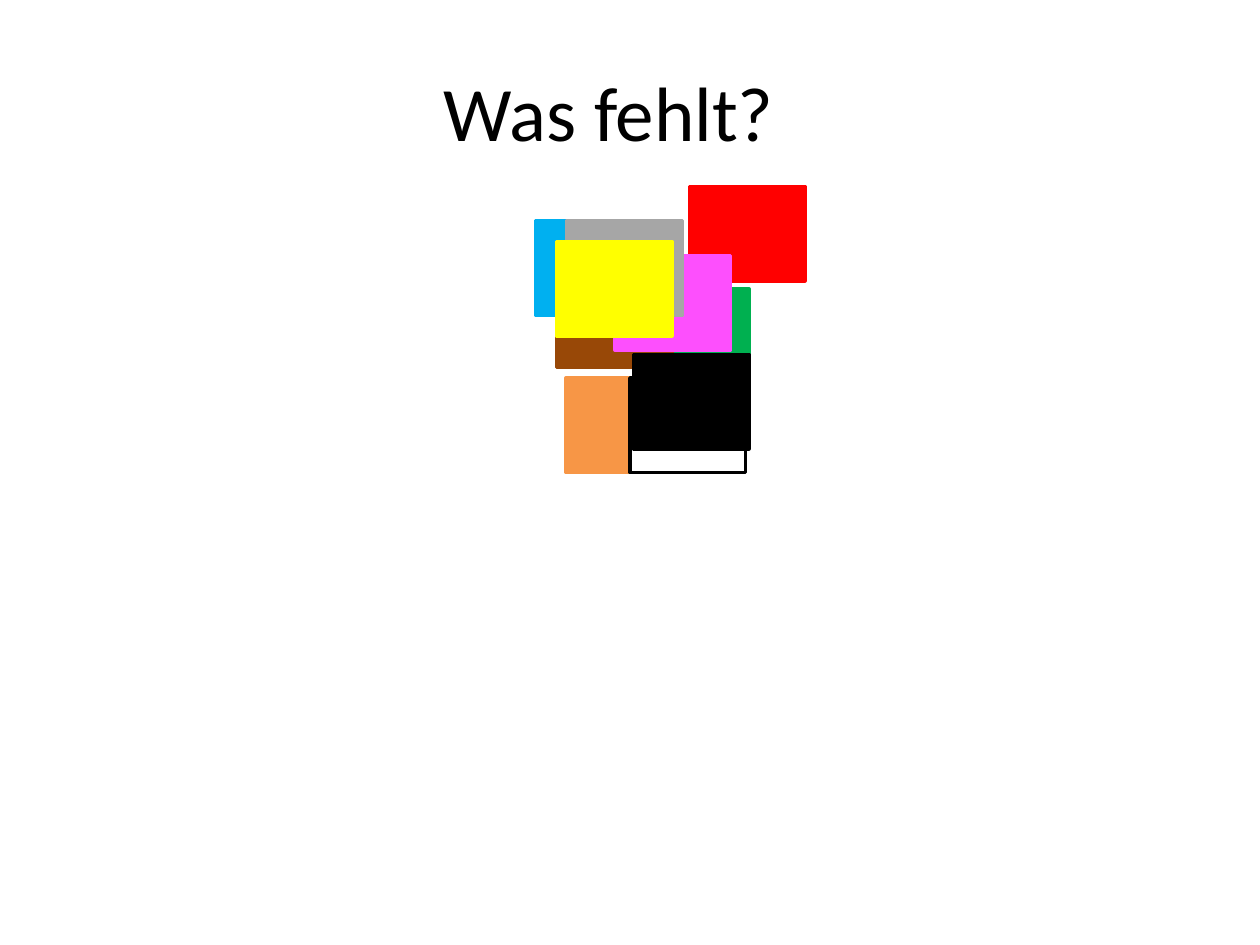
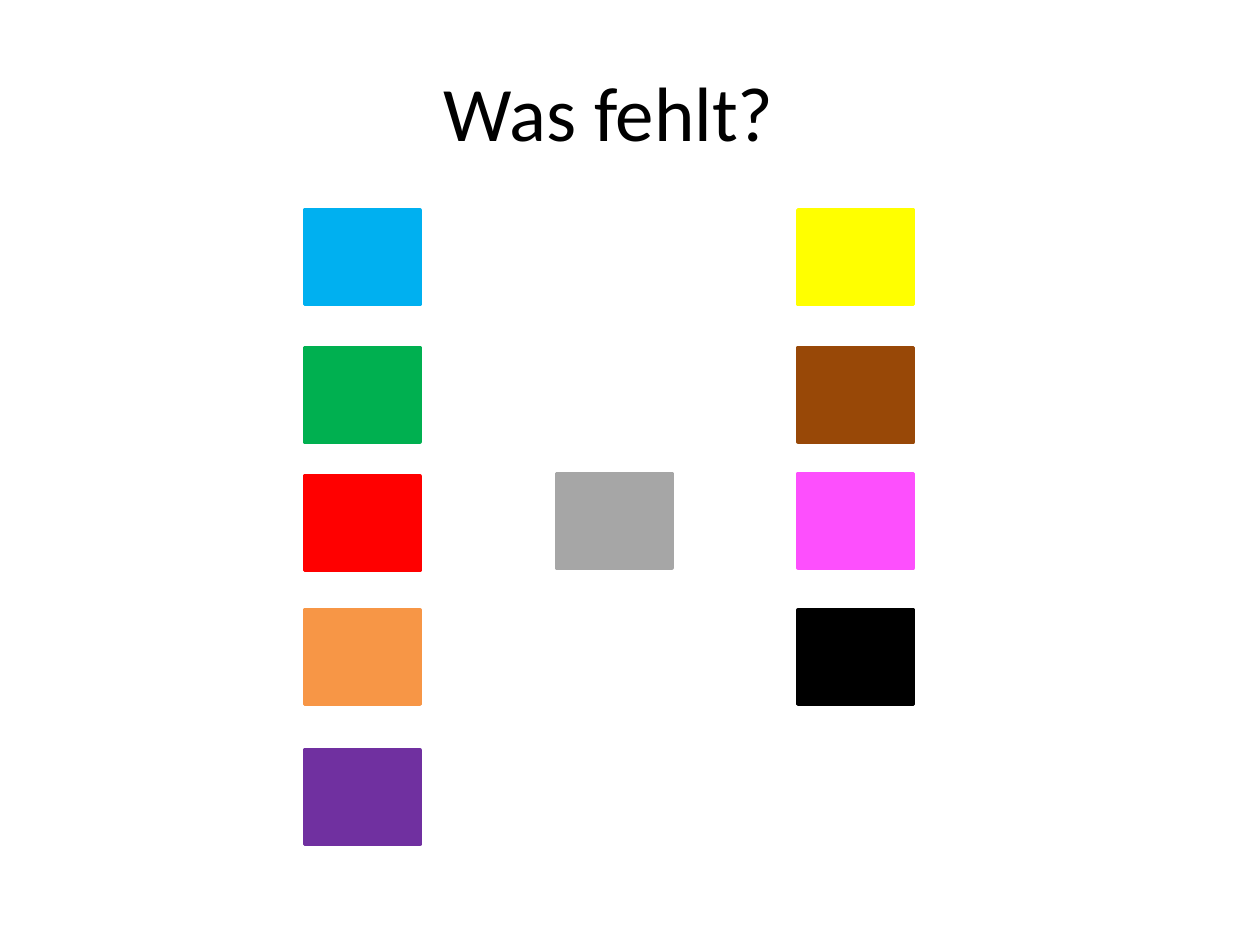
import pptx
import pptx.util
import pptx.dml.color
import pptx.enum.shapes
import pptx.enum.text

Pt = pptx.util.Pt
RGBColor = pptx.dml.color.RGBColor

theme = {
    "font": "Calibri",
    "title_size": 44,
    "line_width": 2,
    "text": "000000",
    "blue": "00B0F0",
    "green": "00B050",
    "red": "FF0000",
    "orange": "F79646",
    "purple": "7030A0",
    "brown": "984807",
    "white": "FFFFFF",
    "pink": "FD4FFD",
    "black": "000000",
    "grey": "A6A6A6",
    "yellow": "FFFF00",
}
outlines = {"white": theme["black"]}
card_width, card_height = 66, 54

piled_cards = [
    ("blue", 306, 126),
    ("green", 362, 165),
    ("red", 394, 106.5),
    ("orange", 323.5, 216),
    ("brown", 318, 156),
    ("white", 360, 216),
    ("pink", 351.5, 146),
    ("black", 362, 202.5),
    ("grey", 324, 126),
    ("yellow", 318, 138),
]

left, middle, right = 174, 318, 456
rows = [120, 198.5, 272, 348.5, 428.5]
center_row = 270.5
spread_cards = [
    (name, left, top)
    for name, top in zip(["blue", "green", "red", "orange", "purple"], rows)
]
spread_cards += [
    ("brown", right, rows[1]),
    ("pink", right, center_row),
    ("black", right, rows[3]),
    ("grey", middle, center_row),
    ("yellow", right, rows[0]),
]


def add_card(slide, name, x, y):
    shape = slide.shapes.add_shape(
        pptx.enum.shapes.MSO_SHAPE.RECTANGLE,
        Pt(x), Pt(y), Pt(card_width), Pt(card_height),
    )
    shape.shadow.inherit = False
    shape.fill.solid()
    shape.fill.fore_color.rgb = RGBColor.from_string(theme[name])
    shape.line.color.rgb = RGBColor.from_string(outlines.get(name, theme[name]))
    shape.line.width = Pt(theme["line_width"])


def add_title(slide, text):
    title = slide.shapes.add_textbox(Pt(120), Pt(18), Pt(456), Pt(90))
    frame_format = {
        "word_wrap": True,
        "vertical_anchor": pptx.enum.text.MSO_ANCHOR.MIDDLE,
    }
    for attribute, value in frame_format.items():
        setattr(title.text_frame, attribute, value)
    paragraph = title.text_frame.paragraphs[0]
    paragraph.alignment = pptx.enum.text.PP_ALIGN.CENTER
    run = paragraph.add_run()
    run.text = text
    font_format = {"name": theme["font"], "size": Pt(theme["title_size"])}
    for attribute, value in font_format.items():
        setattr(run.font, attribute, value)
    run.font.color.rgb = RGBColor.from_string(theme["text"])


presentation = pptx.Presentation()
presentation.slide_width = Pt(720)
presentation.slide_height = Pt(540)

for cards in (piled_cards, spread_cards):
    slide = presentation.slides.add_slide(presentation.slide_layouts[6])
    *lower_cards, top_card = cards
    for card in lower_cards:
        add_card(slide, *card)
    add_title(slide, "Was fehlt?")
    add_card(slide, *top_card)

presentation.save("out.pptx")
